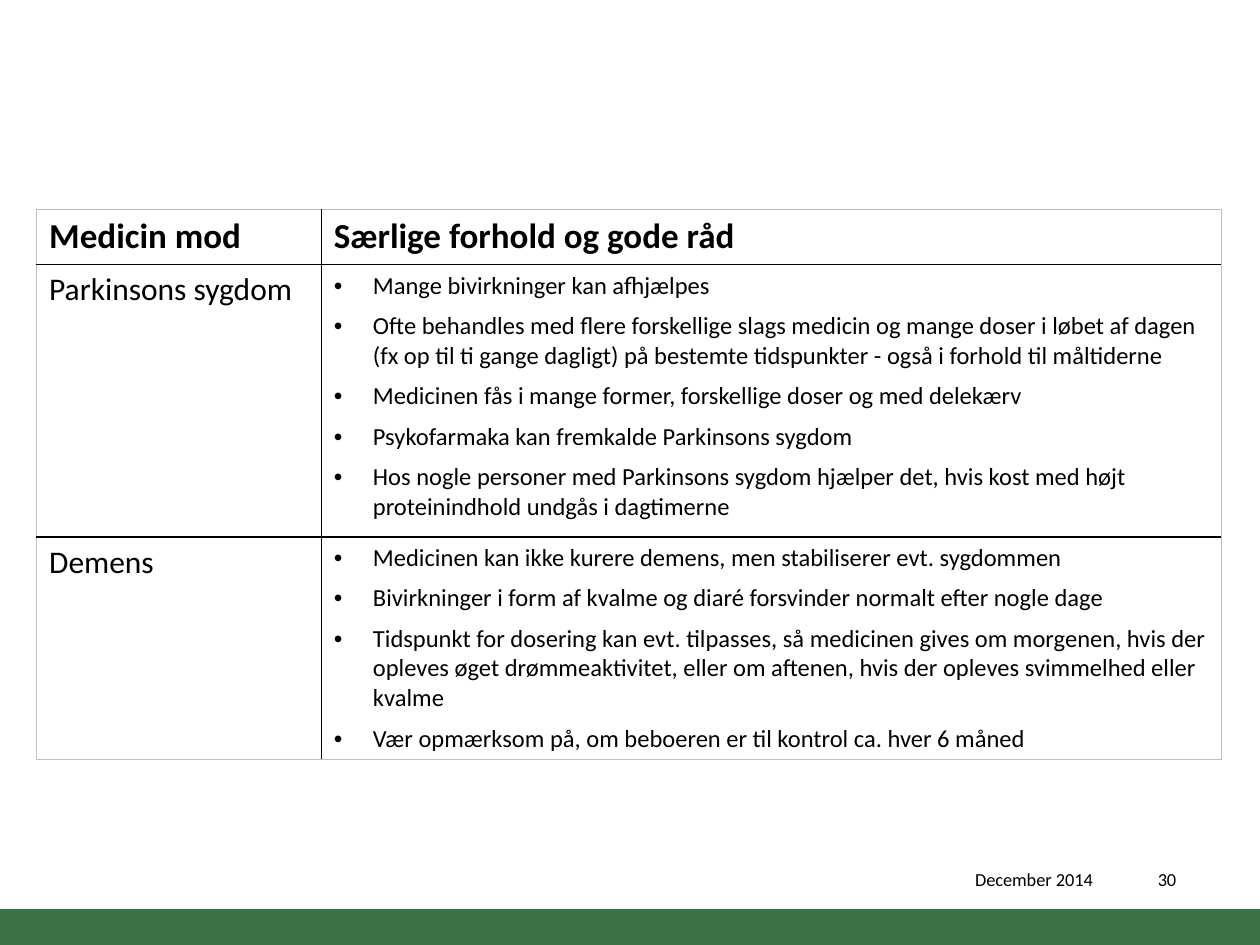
from lxml import etree
from pptx import Presentation
from pptx import util as u
from pptx.dml.color import RGBColor
from pptx.enum import shapes
from pptx.oxml import ns

HEADERS = ("Medicin mod", "Særlige forhold og gode råd")
ADVICE = {
    "Parkinsons sygdom": [
        "Mange bivirkninger kan afhjælpes",
        "Ofte behandles med flere forskellige slags medicin og mange doser i løbet af dagen "
        "(fx op til ti gange dagligt) på bestemte tidspunkter - også i forhold til måltiderne",
        "Medicinen fås i mange former, forskellige doser og med delekærv",
        "Psykofarmaka kan fremkalde Parkinsons sygdom",
        "Hos nogle personer med Parkinsons sygdom hjælper det, hvis kost med højt "
        "proteinindhold undgås i dagtimerne",
    ],
    "Demens": [
        "Medicinen kan ikke kurere demens, men stabiliserer evt. sygdommen",
        "Bivirkninger i form af kvalme og diaré forsvinder normalt efter nogle dage",
        "Tidspunkt for dosering kan evt. tilpasses, så medicinen gives om morgenen, hvis der "
        "opleves øget drømmeaktivitet, eller om aftenen, hvis der opleves svimmelhed eller kvalme",
        "Vær opmærksom på, om beboeren er til kontrol ca. hver 6 måned",
    ],
}
FOOTER = [("December 2014", 7.64, 1.38), ("30", 9.09, 0.45)]  # text, left, width
COLORS = {"text": "000000", "rule": "000000", "frame": "BFBFBF", "band": "3C7145"}
FONT = "Calibri"
WIDTH, HEIGHT = 10, 7.5
BAND_HEIGHT = 0.27
TABLE_LEFT, TABLE_TOP = 0.29, 1.66
COLUMNS, ROWS = (2.26, 7.14), (0.43, 2.16, 1.62)
INDENT = u.Inches(0.31)


def style(para, size, bold=False):
    font = para.font
    font.name, font.size, font.bold = FONT, u.Pt(size), bold
    font.color.rgb = RGBColor.from_string(COLORS["text"])


def add_bullet(para):
    para.space_after = u.Pt(6)
    props = para._p.get_or_add_pPr()
    props.set("marL", str(INDENT))
    props.set("indent", str(-INDENT))
    etree.SubElement(props, ns.qn("a:buFont"), typeface="Arial")
    etree.SubElement(props, ns.qn("a:buChar"), char="•")


def set_borders(cell, row, column):
    """Black rules between cells, a thin grey frame round the table."""
    outer = {"L": column == 0, "R": column == len(COLUMNS) - 1,
             "T": row == 0, "B": row == len(ROWS) - 1}
    props = cell._tc.get_or_add_tcPr()
    for place, (side, is_frame) in enumerate(outer.items()):
        line = etree.Element(ns.qn(f"a:ln{side}"), w=str(u.Pt(0.5 if is_frame else 1)))
        fill = etree.SubElement(line, ns.qn("a:solidFill"))
        etree.SubElement(fill, ns.qn("a:srgbClr"), val=COLORS["frame" if is_frame else "rule"])
        props.insert(place, line)


def fill_cell(cell, lines, size, bold=False, bulleted=False):
    cell.text_frame.text = "\n".join(lines)
    for para in cell.text_frame.paragraphs:
        if bulleted:
            add_bullet(para)
        style(para, size, bold)


def add_advice_table(page):
    table = page.shapes.add_table(
        len(ROWS), len(COLUMNS), u.Inches(TABLE_LEFT), u.Inches(TABLE_TOP),
        u.Inches(sum(COLUMNS)), u.Inches(sum(ROWS))).table
    for column, width in zip(table.columns, COLUMNS):
        column.width = u.Inches(width)
    for row, height in zip(table.rows, ROWS):
        row.height = u.Inches(height)
    for column, header in enumerate(HEADERS):
        fill_cell(table.cell(0, column), [header], 20, bold=True)
    for row, (illness, tips) in enumerate(ADVICE.items(), start=1):
        fill_cell(table.cell(row, 0), [illness], 18)
        fill_cell(table.cell(row, 1), tips, 14, bulleted=True)
    for row in range(len(ROWS)):
        for column in range(len(COLUMNS)):
            cell = table.cell(row, column)
            cell.fill.background()
            set_borders(cell, row, column)


def add_band(page):
    band = page.shapes.add_shape(
        shapes.MSO_SHAPE.RECTANGLE, 0, u.Inches(HEIGHT - BAND_HEIGHT),
        u.Inches(WIDTH), u.Inches(BAND_HEIGHT))
    band.shadow.inherit = False
    green = RGBColor.from_string(COLORS["band"])
    band.fill.solid()
    band.fill.fore_color.rgb = green
    band.line.color.rgb = green
    band.line.width = u.Pt(2)


def main():
    deck = Presentation()
    deck.slide_width, deck.slide_height = u.Inches(WIDTH), u.Inches(HEIGHT)
    page = deck.slides.add_slide(deck.slide_layouts[6])
    add_band(page)
    add_advice_table(page)
    for words, left, width in FOOTER:
        box = page.shapes.add_textbox(
            u.Inches(left), u.Inches(6.84), u.Inches(width), u.Inches(0.4))
        box.text_frame.word_wrap = True
        box.text_frame.text = words
        style(box.text_frame.paragraphs[0], 10.5)
    deck.save("out.pptx")


if __name__ == "__main__":
    main()
